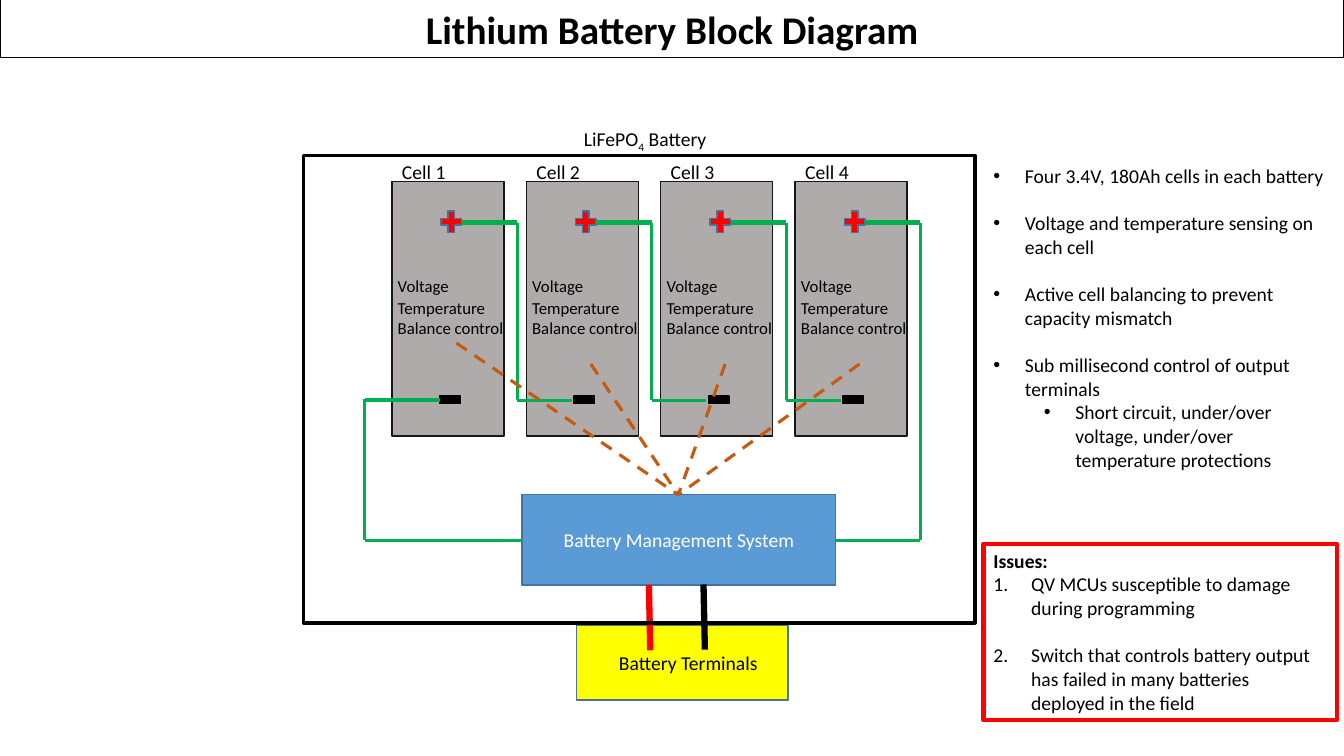
from dataclasses import dataclass
from typing import Optional

from lxml import etree
from pptx import Presentation
from pptx import util as u
from pptx.dml.color import RGBColor
from pptx.enum import dml, shapes, text
from pptx.oxml import ns

GREEN, RED, BLACK = "00B050", "FF0000", "000000"
STEEL, ORANGE = "43739E", "C55A11"
LINE_GAP = 17.1  # height of one 14 pt line


@dataclass
class Cell:
    number: int
    left: float
    sense_top: float


@dataclass
class Wire:
    x1: float
    y1: float
    x2: float
    y2: float
    color: str = GREEN
    width: float = 2.25
    dashed: bool = False


@dataclass
class Item:
    words: str
    bullet: str = ""  # a character, or "auto" for numbering
    indent: float = 0
    hang: float = 0
    gap: float = 0
    bold: bool = False
    level: int = 0


def rgb(color: str) -> RGBColor:
    return RGBColor.from_string(color)


def add_run(paragraph, words: str, *, size: float = 14, color: str = BLACK,
            bold: bool = False, baseline: int = 0) -> None:
    run = paragraph.add_run()
    run.text = words
    run.font.name = "Calibri"
    run.font.size = u.Pt(size)
    run.font.bold = bold
    run.font.color.rgb = rgb(color)
    if baseline:
        run.font._element.set("baseline", str(baseline))


def add_box(left: float, top: float, width: float, height: float, *,
            kind=shapes.MSO_SHAPE.RECTANGLE, fill: Optional[str] = None,
            line: str = BLACK, weight: float = 1):
    box = slide.shapes.add_shape(kind, u.Pt(left), u.Pt(top), u.Pt(width), u.Pt(height))
    box.shadow.inherit = False
    if fill:
        box.fill.solid()
        box.fill.fore_color.rgb = rgb(fill)
    else:
        box.fill.background()
    box.line.color.rgb = rgb(line)
    box.line.width = u.Pt(weight)
    return box


def add_wire(wire: Wire) -> None:
    connector = slide.shapes.add_connector(
        shapes.MSO_CONNECTOR.STRAIGHT,
        u.Pt(wire.x1), u.Pt(wire.y1), u.Pt(wire.x2), u.Pt(wire.y2))
    connector.line.color.rgb = rgb(wire.color)
    connector.line.width = u.Pt(wire.width)
    if wire.dashed:
        connector.line.dash_style = dml.MSO_LINE.DASH
    etree.SubElement(connector._element.spPr, ns.qn("a:effectLst"))


def add_label(left: float, top: float, width: float, height: float,
              *lines: str, **style):
    """Place a text box with one paragraph per line; return its frame."""
    frame = slide.shapes.add_textbox(
        u.Pt(left), u.Pt(top), u.Pt(width), u.Pt(height)).text_frame
    frame.word_wrap = True
    for index, words in enumerate(lines):
        paragraph = frame.add_paragraph() if index else frame.paragraphs[0]
        add_run(paragraph, words, **style)
    return frame


def fill_list(frame, items: list[Item]) -> None:
    frame.word_wrap = True
    frame.vertical_anchor = text.MSO_ANCHOR.TOP
    for index, item in enumerate(items):
        paragraph = frame.add_paragraph() if index else frame.paragraphs[0]
        paragraph.alignment = text.PP_ALIGN.LEFT
        paragraph.level = item.level
        paragraph.space_before = u.Pt(item.gap)
        add_run(paragraph, item.words, bold=item.bold)
        if item.bullet:
            props = paragraph._p.get_or_add_pPr()
            props.set("marL", str(u.Pt(item.indent)))
            props.set("indent", str(-u.Pt(item.hang)))
            if item.bullet == "auto":
                etree.SubElement(props, ns.qn("a:buAutoNum"), type="arabicPeriod")
            else:
                etree.SubElement(props, ns.qn("a:buFont"), typeface="Arial")
                etree.SubElement(props, ns.qn("a:buChar"), char=item.bullet)


def draw_cell(cell: Cell) -> None:
    add_box(cell.left, 129.5, 80, 182, fill="AFABAB", line="181717")
    add_box(cell.left + 32.5, 148, 20, 21, kind=shapes.MSO_SHAPE.MATH_PLUS,
            fill=RED, line=STEEL)
    add_box(cell.left + 31.5, 274, 20, 23, kind=shapes.MSO_SHAPE.MATH_MINUS, fill=BLACK)
    add_label(cell.left - 3, 193.5, 98.5, 22, "Voltage", size=12)
    add_label(cell.left - 3, 209, 98.5, 51, "Temperature", "Balance control", size=12)
    add_label(cell.left, 111, 98.5, 24, f"Cell {cell.number}")


prs = Presentation()
prs.slide_width, prs.slide_height = u.Pt(960), u.Pt(540)
slide = prs.slides.add_slide(prs.slide_layouts[6])

# Terminal block and cells
add_box(412, 447, 151, 53, fill="FFFF00", line=STEEL)
cells = [Cell(n, 280 + 96 * (n - 1), 245 if n == 1 else 260) for n in range(1, 5)]
for cell in cells:
    draw_cell(cell)

# Battery management system
bms = add_box(373, 353, 224, 65, fill="5B9BD5", line=STEEL).text_frame
bms.vertical_anchor = text.MSO_ANCHOR.MIDDLE
bms.paragraphs[0].alignment = text.PP_ALIGN.CENTER
add_run(bms.paragraphs[0], "Battery Management System", color="FFFFFF")

# Series wiring: each plus pole runs to the next minus pole, the last to the BMS
PLUS_Y, MINUS_Y, BMS_Y = 159, 286, 386
for cell in cells:
    riser = cell.left + 89.5
    end_x, end_y = (597, BMS_Y) if cell is cells[-1] else (cell.left + 128.5, MINUS_Y)
    add_wire(Wire(cell.left + 50, PLUS_Y, riser, PLUS_Y, width=3))
    add_wire(Wire(end_x, end_y, riser, end_y))
    add_wire(Wire(riser, PLUS_Y, riser, end_y))

# Return wire from the first minus pole
add_wire(Wire(260.5, 285.5, 314, 285.5, width=3))
add_wire(Wire(260.5, BMS_Y, 373, BMS_Y))
add_wire(Wire(260.5, 285, 260.5, BMS_Y))

# Sensing lines and output leads
for cell in cells:
    add_wire(Wire(cell.left + 46, cell.sense_top, 484.5, 353.5, ORANGE, dashed=True))
add_wire(Wire(463.5, 418, 464.5, 464.5, RED, 4.5))
add_wire(Wire(502.5, 417.5, 503.5, 464, BLACK, 4.5))

# Battery outline and labels
add_box(217, 111, 479.5, 334, weight=2.25)
battery = add_label(410, 87, 145.5, 24, "LiFePO").paragraphs[0]
add_run(battery, "4", baseline=-25000)
add_run(battery, " Battery")
add_label(435, 461.5, 145.5, 24, "Battery Terminals")

# Title
title = add_box(0, 0, 960, 41, weight=0.75).text_frame
title.vertical_anchor = text.MSO_ANCHOR.TOP
title.paragraphs[0].alignment = text.PP_ALIGN.CENTER
add_run(title.paragraphs[0], "Lithium Battery Block Diagram", size=28, bold=True)

# Features
features = ["Four 3.4V, 180Ah cells in each battery",
            "Voltage and temperature sensing on each cell",
            "Active cell balancing to prevent capacity mismatch",
            "Sub millisecond control of output terminals"]
fill_list(add_label(702.5, 113.5, 253.5, 245), [
    *(Item(words, "•", 22.5, 22.5, gap=LINE_GAP if index else 0)
      for index, words in enumerate(features)),
    Item("Short circuit, under/over voltage, under/over temperature protections",
         "•", 58.5, 22.5, level=1)])

# Issues
fill_list(add_box(702.5, 388.5, 252.5, 126, line=RED, weight=3).text_frame, [
    Item("Issues:", bold=True),
    Item("QV MCUs susceptible to damage during programming", "auto", 27, 27),
    Item("Switch that controls battery output has failed in many batteries "
         "deployed in the field", "auto", 27, 27, gap=LINE_GAP)])

prs.save("out.pptx")
